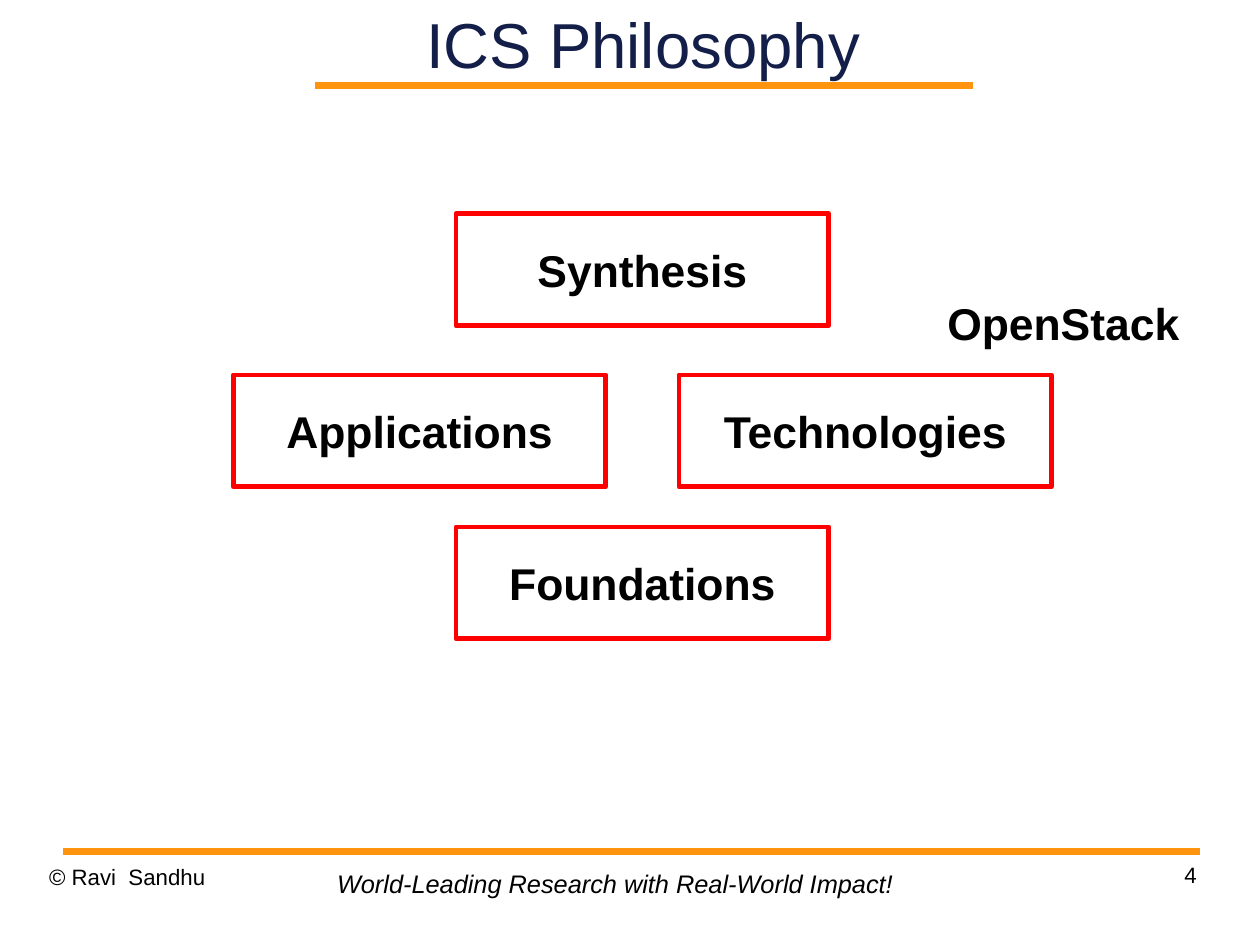
import pptx
import pptx.dml.color
import pptx.enum.shapes
import pptx.enum.text
import pptx.util
from lxml import etree

Inches, Pt = pptx.util.Inches, pptx.util.Pt
RGB = pptx.dml.color.RGBColor.from_string
ALIGN = pptx.enum.text.PP_ALIGN
ANCHOR = pptx.enum.text.MSO_ANCHOR
AUTO = pptx.enum.text.MSO_AUTO_SIZE

COLORS = {"orange": "FF950E", "navy": "131F49", "red": "FF0000", "black": "000000"}
A_NS = "http://schemas.openxmlformats.org/drawingml/2006/main"


def write(sp, text, color="black", align=ALIGN.LEFT, frame=None, **font):
    """Put one formatted paragraph into a shape and return it."""
    tf = sp.text_frame
    for name, value in (frame or {}).items():
        setattr(tf, name, value)
    p = tf.paragraphs[0]
    p.alignment = align
    r = p.add_run()
    r.text = text
    for name, value in {"name": "Arial", **font}.items():
        setattr(r.font, name, value)
    r.font.color.rgb = RGB(COLORS[color])
    return p


prs = pptx.Presentation()
prs.slide_width, prs.slide_height = Inches(28 / 2.54), Inches(21 / 2.54)  # 28 x 21 cm
s = prs.slides.add_slide(prs.slide_layouts[5])

no_margins = {f"margin_{side}": 0 for side in ("left", "top", "right", "bottom")}
fixed = {**no_margins, "word_wrap": True, "auto_size": AUTO.NONE}
fitted = {"word_wrap": False, "auto_size": AUTO.SHAPE_TO_FIT_TEXT}

# Title
title = s.shapes.title
title.left, title.top, title.width, title.height = map(Inches, (2.41, 0, 6.43, 0.75))
write(title, "ICS Philosophy", "navy", ALIGN.CENTER,
      {**fixed, "vertical_anchor": ANCHOR.MIDDLE}, size=Pt(40))

# Rules under the title and above the footer
for x1, x2, y in [(2.76, 8.51, 0.75), (0.55, 10.5, 7.45)]:
    rule = s.shapes.add_connector(pptx.enum.shapes.MSO_CONNECTOR.STRAIGHT,
                                  Inches(x1), Inches(y), Inches(x2), Inches(y))
    rule.line.color.rgb = RGB(COLORS["orange"])
    rule.line.width = Pt(4.31)
    etree.SubElement(rule.element.spPr, f"{{{A_NS}}}effectLst")

# Footer
for text, x, y, align in [("© Ravi  Sandhu", 0.43, 7.55, ALIGN.LEFT),
                          ("4", 7.9, 7.53, ALIGN.RIGHT)]:
    sp = s.shapes.add_textbox(Inches(x), Inches(y), Inches(2.57), Inches(0.57))
    p = write(sp, text, align=align, frame=fixed, size=Pt(14))
    p.line_spacing = 1.01

motto = s.shapes.add_textbox(Inches(2.85), Inches(7.55), Inches(5.08), Inches(0.37))
write(motto, "World-Leading Research with Real-World Impact!", frame=fitted,
      size=Pt(16), italic=True)

# Diamond of boxes
for text, x, y in [("Foundations", 3.99, 4.61), ("Applications", 2.04, 3.28),
                   ("Technologies", 5.94, 3.28), ("Synthesis", 3.99, 1.87)]:
    box = s.shapes.add_shape(pptx.enum.shapes.MSO_SHAPE.RECTANGLE,
                             Inches(x), Inches(y), Inches(3.26), Inches(0.98))
    box.shadow.inherit = False
    box.fill.background()
    box.line.color.rgb = RGB(COLORS["red"])
    box.line.width = Pt(3)
    write(box, text, align=ALIGN.CENTER, frame={"vertical_anchor": ANCHOR.MIDDLE},
          size=Pt(28), bold=True)

example = s.shapes.add_textbox(Inches(8.19), Inches(2.54), Inches(2.26), Inches(0.57))
write(example, "OpenStack", frame=fitted, size=Pt(28), bold=True)

prs.save("out.pptx")
